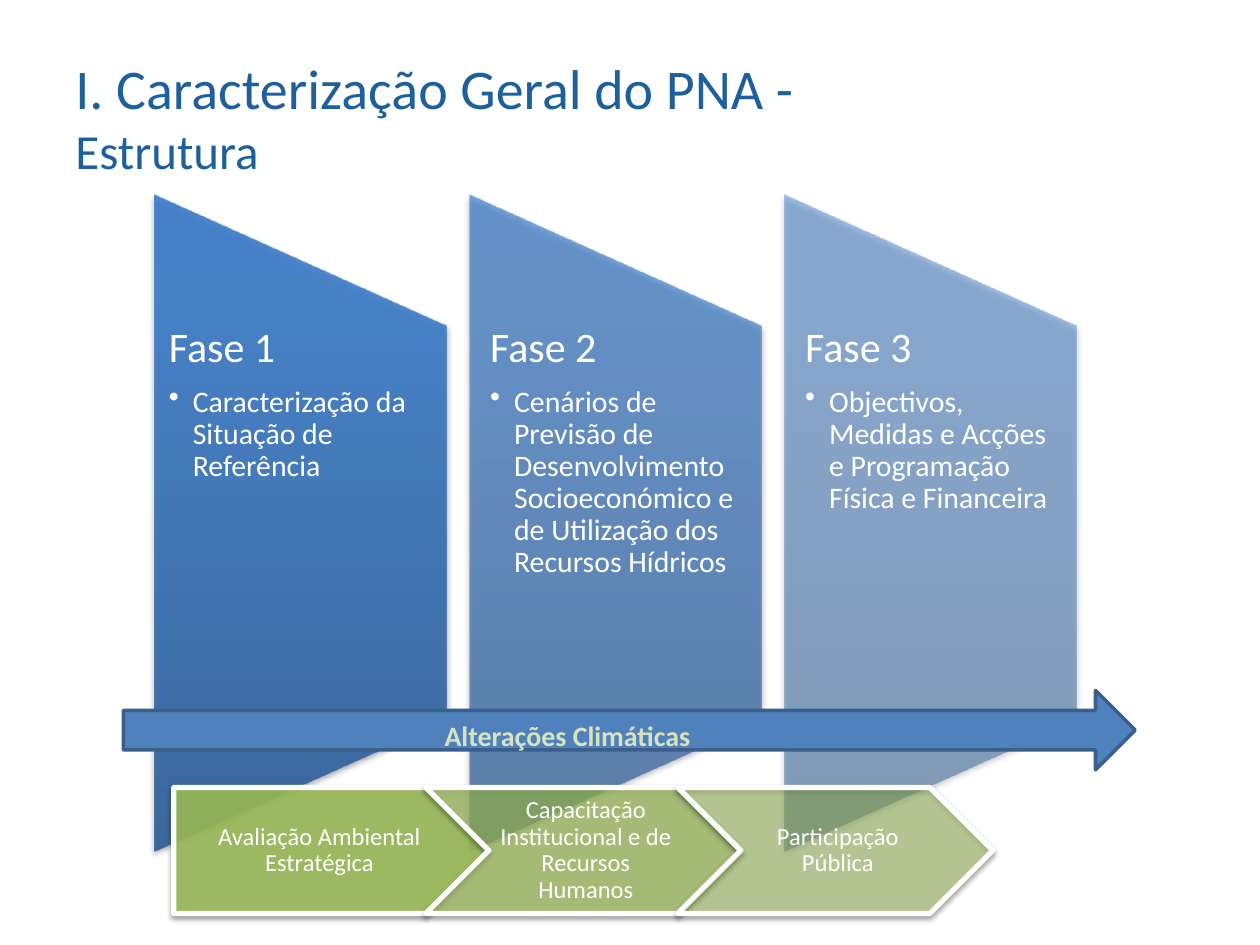
from lxml.etree import SubElement
from pptx import Presentation
from pptx.dml.color import RGBColor
from pptx.enum.shapes import MSO_SHAPE
from pptx.enum.text import MSO_ANCHOR, PP_ALIGN
from pptx.oxml import parse_xml
from pptx.oxml.ns import nsdecls, qn
from pptx.util import Inches, Pt

rgb = RGBColor.from_string
WHITE = "FFFFFF"


def add_shadowed(kind, left, top, width, height, opacity):
    """Add a shape with a soft black shadow below it."""
    shape = slide.shapes.add_shape(
        kind, Inches(left), Inches(top), Inches(width), Inches(height))
    shape.shadow.inherit = False
    effects = shape._element.spPr.find(qn("a:effectLst"))
    effects.append(parse_xml(
        f'<a:outerShdw {nsdecls("a")} blurRad="39400" dist="22000" dir="5400000" rotWithShape="0">'
        f'<a:srgbClr val="000000"><a:alpha val="{opacity * 1000}"/></a:srgbClr></a:outerShdw>'))
    return shape


def add_text(left, top, width, height, margins=(0.1, 0.05, 0.1, 0.05), anchor=MSO_ANCHOR.TOP):
    frame = slide.shapes.add_textbox(
        Inches(left), Inches(top), Inches(width), Inches(height)).text_frame
    frame.word_wrap = True
    frame.vertical_anchor = anchor
    (frame.margin_left, frame.margin_top,
     frame.margin_right, frame.margin_bottom) = map(Inches, margins)
    return frame


prs = Presentation()
prs.slide_width, prs.slide_height = Inches(10), Inches(7.5)
slide = prs.slides.add_slide(prs.slide_layouts[6])

# Title
title = add_text(0.5, 0.3, 7.18, 1.25, anchor=MSO_ANCHOR.MIDDLE).paragraphs[0]
title.font.name = "Calibri"
title.font.color.rgb = rgb("1E609B")
for wording, size in [("I. Caracterização Geral do PNA - ", 32), ("Estrutura", 28)]:
    run = title.add_run()
    run.text = wording
    run.font.size = Pt(size)

# Phases: quarter-turned trapezoids, each paler than the one before
phases = [
    ("Fase 1", "Caracterização da Situação de Referência", 90, 0.12),
    ("Fase 2", "Cenários de Previsão de Desenvolvimento Socioeconómico "
               "e de Utilização dos Recursos Hídricos", 70, 0.17),
    ("Fase 3", "Objectivos, Medidas e Acções e Programação Física e Financeira", 50, 0.17),
]
for i, (name, content, opacity, margin) in enumerate(phases):
    panel = add_shadowed(MSO_SHAPE.FLOWCHART_MANUAL_OPERATION,
                         -0.22 + 2.5 * i, 2.99, 5.21, 2.32, 35)
    panel.rotation = 270
    panel.line.fill.background()
    stops = "".join(
        f'<a:gs pos="{pos}000"><a:srgbClr val="{color}"><a:alpha val="{opacity}000"/></a:srgbClr></a:gs>'
        for pos, color in [(0, "2F5F99"), (80, "3D7CC7"), (100, "3A7CCB")])
    panel._element.spPr.find(qn("a:prstGeom")).addnext(parse_xml(
        f'<a:gradFill {nsdecls("a")} rotWithShape="0"><a:gsLst>{stops}</a:gsLst>'
        '<a:lin ang="16200000" scaled="0"/></a:gradFill>'))

    frame = add_text(1.22 + 2.5 * i, 2.59, 2.32, 3.12, (margin, 0, margin, 0))
    heading, bullet = frame.paragraphs[0], frame.add_paragraph()
    bullet.level = 1
    props = bullet._p.get_or_add_pPr()
    props.set("marL", str(Inches(0.19)))
    props.set("indent", str(-Inches(0.19)))
    SubElement(props, qn("a:buChar"), char="•")
    for paragraph, wording, size, after in [(heading, name, 24, 8.4), (bullet, content, 17, 2.55)]:
        paragraph.text = wording
        paragraph.line_spacing = 0.9
        paragraph.space_after = Pt(after)
        paragraph.font.name = "Calibri"
        paragraph.font.size = Pt(size)
        paragraph.font.color.rgb = rgb(WHITE)

# Cross-cutting steps: outline, wording, opacity, text left, text width, left margin
steps = [
    (MSO_SHAPE.PENTAGON, "Avaliação Ambiental Estratégica", 90, 1.38, 2.25, 0.08),
    (MSO_SHAPE.CHEVRON, "Capacitação Institucional e de Recursos Humanos", 70, 3.88, 1.5, 0.06),
    (MSO_SHAPE.CHEVRON, "Participação Pública", 50, 5.88, 1.5, 0.06),
]
for i, (kind, wording, opacity, left, width, margin) in enumerate(steps):
    step = add_shadowed(kind, 1.38 + 2 * i, 6.25, 2.5, 1, 38)
    step.fill.solid()
    step.fill.fore_color.rgb = rgb("9BBB59")
    fill_color = step._element.spPr.find(qn("a:solidFill")).find(qn("a:srgbClr"))
    SubElement(fill_color, qn("a:alpha"), val=str(opacity * 1000))
    step.line.color.rgb = rgb(WHITE)
    step.line.width = Pt(3)

    label = add_text(left, 6.25, width, 1, (margin, 0.04, 0.02, 0.04),
                     MSO_ANCHOR.MIDDLE).paragraphs[0]
    label.text = wording
    label.alignment = PP_ALIGN.CENTER
    label.line_spacing = 0.9
    label.space_after = Pt(4.9)
    label.font.name = "Calibri"
    label.font.size = Pt(14)
    label.font.color.rgb = rgb(WHITE)

# Climate change arrow across all phases
climate_arrow = slide.shapes.add_shape(
    MSO_SHAPE.RIGHT_ARROW, Inches(0.98), Inches(5.48), Inches(8.03), Inches(0.63))
climate_arrow.shadow.inherit = False
climate_arrow.fill.solid()
climate_arrow.fill.fore_color.rgb = rgb("4F81BD")
climate_arrow.line.color.rgb = rgb("3A5F8C")
climate_arrow.line.width = Pt(2)

climate = add_text(3.43, 5.65, 2.62, 0.37).paragraphs[0]
climate.text = "Alterações Climáticas"
climate.font.name = "Calibri"
climate.font.size = Pt(16)
climate.font.bold = True
climate.font.color.rgb = rgb("D7E4BD")

prs.save("out.pptx")
